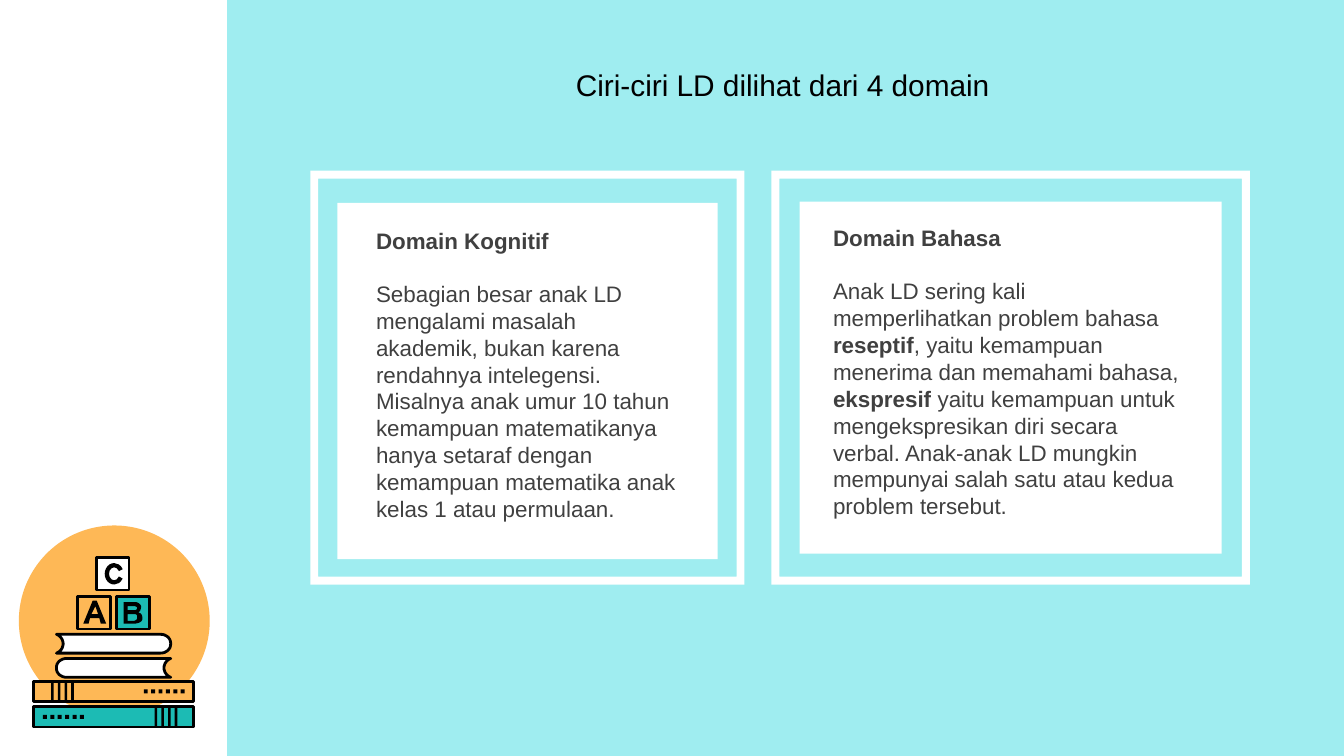
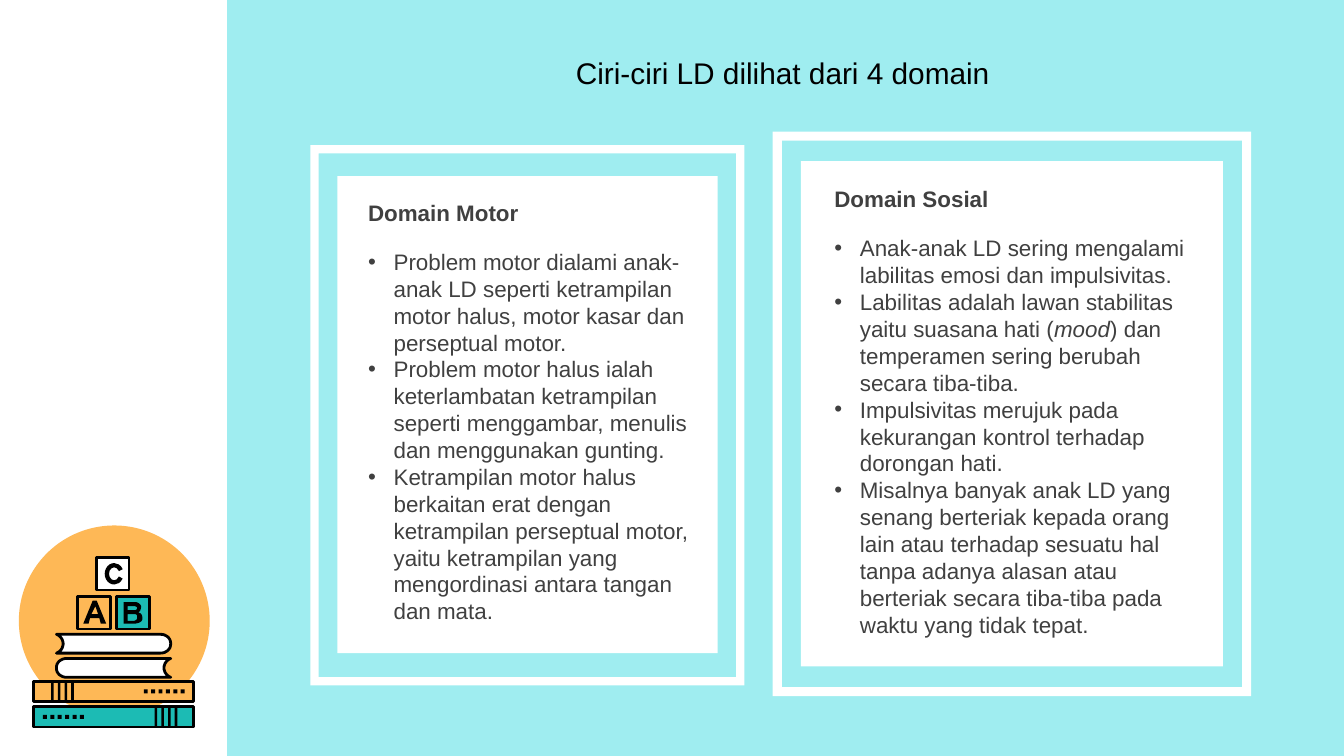
import pptx
import pptx.dml.color
import pptx.enum.shapes
import pptx.enum.text
import pptx.oxml.ns
import pptx.util
from lxml import etree

Inches = pptx.util.Inches
Pt = pptx.util.Pt
KIND = pptx.enum.shapes.MSO_SHAPE

COLORS = {"aqua": "9FEDF0", "gold": "FEB856", "teal": "1CBBB4",
          "white": "FFFFFF", "black": "000000", "gray": "404040"}
FONT = "Arial"
TITLE = "Ciri-ciri LD dilihat dari 4 domain"
INDENT = 0.19

# Outlines: a pair is a corner, a triple of pairs is a curve.
LETTER_A = [
    [(0.71, 4.51), (0.68, 4.57), (0.73, 4.57)],
    [(0.69, 4.47), (0.72, 4.47), (0.79, 4.64), (0.75, 4.64),
     (0.74, 4.6), (0.67, 4.6), (0.66, 4.64), (0.62, 4.64)],
]
LETTER_B = [
    [(0.95, 4.57), (0.95, 4.62), (1, 4.62),
     ((1.02, 4.61), (1.02, 4.61), (1.02, 4.59)),
     ((1.02, 4.58), (1.02, 4.57), (1, 4.57))],
    [(0.95, 4.51), (0.95, 4.54), (1, 4.54),
     ((1.01, 4.54), (1.02, 4.54), (1.02, 4.52)),
     ((1.02, 4.52), (1.01, 4.51), (1, 4.51))],
    [(0.92, 4.48), (1, 4.48),
     ((1.04, 4.48), (1.05, 4.51), (1.05, 4.51)),
     ((1.05, 4.54), (1.04, 4.55), (1.03, 4.56)),
     ((1.05, 4.56), (1.06, 4.58), (1.06, 4.6)),
     ((1.06, 4.63), (1.03, 4.64), (1, 4.64)), (0.92, 4.64)],
]
BOOK = [
    (0.42, 4.72), (1.19, 4.72),
    ((1.24, 4.72), (1.27, 4.75), (1.27, 4.79)),
    ((1.27, 4.83), (1.24, 4.86), (1.19, 4.86)), (0.42, 4.86),
    ((0.45, 4.85), (0.47, 4.82), (0.47, 4.79)),
    ((0.47, 4.76), (0.45, 4.73), (0.42, 4.72)),
]

SLIDES = [
    {"title": (1.85, 0.45, 7.95, 0.5), "gap": 14, "bullets": False, "panels": [
        {"frame": (2.31, 1.27, 3.23, 3.08), "card": (2.51, 1.51, 2.83, 2.65),
         "text": (2.7, 1.64, 2.44, 2.52), "head": "Domain Kognitif", "body": [
            "Sebagian besar anak LD mengalami masalah akademik, bukan karena "
            "rendahnya intelegensi. Misalnya anak umur 10 tahun kemampuan "
            "matematikanya hanya setaraf dengan kemampuan matematika anak "
            "kelas 1 atau permulaan."]},
        {"frame": (5.74, 1.27, 3.56, 3.08), "card": (5.95, 1.5, 3.14, 2.62),
         "text": (6.1, 1.62, 2.83, 2.32), "head": "Domain Bahasa",
         "stress": "bold", "body": [
            "Anak LD sering kali memperlihatkan problem bahasa |reseptif|, "
            "yaitu kemampuan menerima dan memahami bahasa, |ekspresif |yaitu "
            "kemampuan untuk mengekspresikan diri secara verbal. Anak-anak LD "
            "mungkin mempunyai salah satu atau kedua problem tersebut."]},
    ]},
    {"title": (1.85, 0.36, 7.95, 0.42), "gap": 12, "bullets": True, "panels": [
        {"frame": (2.31, 1.08, 3.23, 4.02), "card": (2.51, 1.31, 2.83, 3.55),
         "text": (2.64, 1.43, 2.59, 3.3), "head": "Domain Motor", "body": [
            "Problem motor dialami anak-anak LD seperti ketrampilan motor "
            "halus, motor kasar dan perseptual motor.",
            "Problem motor halus ialah keterlambatan ketrampilan seperti "
            "menggambar, menulis dan menggunakan gunting.",
            "Ketrampilan motor halus berkaitan erat dengan ketrampilan "
            "perseptual motor, yaitu ketrampilan yang mengordinasi antara "
            "tangan dan mata."]},
        {"frame": (5.75, 0.98, 3.56, 4.2), "card": (5.96, 1.2, 3.14, 3.76),
         "text": (6.11, 1.33, 2.83, 3.53), "head": "Domain Sosial",
         "stress": "italic", "body": [
            "Anak-anak LD sering mengalami labilitas emosi dan impulsivitas.",
            "Labilitas adalah lawan stabilitas yaitu suasana hati (|mood|) dan "
            "temperamen sering berubah secara tiba-tiba.",
            "Impulsivitas merujuk pada kekurangan kontrol terhadap dorongan "
            "hati.",
            "Misalnya banyak anak LD yang senang berteriak kepada orang lain "
            "atau terhadap sesuatu hal tanpa adanya alasan atau berteriak "
            "secara tiba-tiba pada waktu yang tidak tepat."]},
    ]},
]


def rgb(name):
    return pptx.dml.color.RGBColor.from_string(COLORS[name])


def paint(shape, fill, line):
    shape.shadow.inherit = False
    shape.fill.solid()
    shape.fill.fore_color.rgb = rgb(fill)
    if line:
        shape.line.color.rgb = rgb("black")
        shape.line.width = Pt(1.5)
    else:
        shape.line.fill.background()


def add_shape(slide, box, fill, kind=KIND.RECTANGLE, line=False, adjust=()):
    shape = slide.shapes.add_shape(kind, *map(Inches, box))
    for index, value in enumerate(adjust):
        shape.adjustments[index] = value
    paint(shape, fill, line)


def flatten(outline, steps=8):
    """Turn corners and cubic curves into a list of points."""
    points = []
    for part in outline:
        if not isinstance(part[0], tuple):
            points.append(part)
            continue
        knots = (points[-1], *part)
        for step in range(1, steps + 1):
            t = step / steps
            u = 1 - t
            weights = (u ** 3, 3 * u * u * t, 3 * u * t * t, t ** 3)
            points.append(tuple(sum(w * knot[axis] for w, knot in zip(weights, knots))
                                for axis in (0, 1)))
    return points


def add_outline(slide, contours, fill, line=False):
    paths = [[(x * 1000, y * 1000) for x, y in contour] for contour in contours]
    builder = slide.shapes.build_freeform(*paths[0][0], scale=Inches(1) / 1000)
    for index, points in enumerate(paths):
        if index:
            builder.move_to(*points[0])
        builder.add_line_segments(points[1:], close=True)
    paint(builder.convert_to_shape(), fill, line)


def add_spine(slide, top, fill, bands, dots):
    """Draw a lying book with four bands and six dots, from the given lefts."""
    add_shape(slide, (0.25, top, 1.19, 0.15), fill, line=True)
    for i in range(4):
        add_shape(slide, (bands + i * 0.05, top, 0.02, 0.15), "black")
    for i in range(6):
        add_shape(slide, (dots + i * 0.055, top + 0.06, 0.03, 0.03), "black")


def add_emblem(slide):
    add_shape(slide, (0.14, 3.91, 1.42, 1.42), "gold", KIND.OVAL)
    add_spine(slide, 5.07, "gold", 0.38, 1.07)
    add_spine(slide, 5.26, "teal", 1.15, 0.32)
    for left, top, fill in ((0.58, 4.44, "gold"), (0.87, 4.44, "teal"),
                            (0.72, 4.15, "white")):
        add_shape(slide, (left, top, 0.24, 0.24), fill, line=True)
    for letter in (LETTER_A, LETTER_B):
        add_outline(slide, [flatten(part) for part in letter], "black")
    add_shape(slide, (0.78, 4.19, 0.14, 0.16), "black", KIND.BLOCK_ARC,
              adjust=(17.567, 198.895, 0.228))
    book = flatten(BOOK)
    add_outline(slide, [book], "white", line=True)
    add_outline(slide, [[(1.69 - x, y + 0.18) for x, y in book]], "white", line=True)


def add_frame(slide, box):
    frame = slide.shapes.add_textbox(*map(Inches, box)).text_frame
    frame.word_wrap = True
    return frame


def style(paragraph, size, color, bold=False):
    for run in paragraph.runs:
        run.font.name = FONT
        run.font.size = Pt(size)
        run.font.color.rgb = rgb(color)
        run.font.bold = bold


def add_title(slide, box):
    paragraph = add_frame(slide, box).paragraphs[0]
    paragraph.text = TITLE
    paragraph.alignment = pptx.enum.text.PP_ALIGN.CENTER
    style(paragraph, 16, "black")


def set_bullet(paragraph):
    props = paragraph._p.get_or_add_pPr()
    props.set("marL", str(Inches(INDENT)))
    props.set("indent", str(-Inches(INDENT)))
    for tag, key, value in (("a:buFont", "typeface", FONT), ("a:buChar", "char", "•")):
        etree.SubElement(props, pptx.oxml.ns.qn(tag)).set(key, value)


def add_body(frame, text, bullet, stress):
    """Add a paragraph; the parts between bars get the stress."""
    paragraph = frame.add_paragraph()
    if bullet:
        set_bullet(paragraph)
    for part in text.split("|"):
        paragraph.add_run().text = part
    style(paragraph, 12, "gray")
    for run in paragraph.runs[1::2]:
        setattr(run.font, stress, True)
    return paragraph


def add_panel(slide, panel, gap, bullets):
    frame = add_frame(slide, panel["text"])
    frame.text = panel["head"]
    style(frame.paragraphs[0], 12, "gray", bold=True)
    for text in panel["body"]:
        add_body(frame, text, bullets, panel.get("stress"))
    frame.paragraphs[1].space_before = Pt(gap)


def main():
    deck = pptx.Presentation()
    deck.slide_width = Inches(10)
    deck.slide_height = Inches(5.625)
    for page in SLIDES:
        slide = deck.slides.add_slide(deck.slide_layouts[6])
        add_shape(slide, (1.69, 0, 8.31, 5.625), "aqua")
        add_emblem(slide)
        add_title(slide, page["title"])
        for panel in page["panels"]:
            add_shape(slide, panel["frame"], "white", KIND.FRAME, adjust=(0.019,))
            add_shape(slide, panel["card"], "white")
        for panel in page["panels"]:
            add_panel(slide, panel, page["gap"], page["bullets"])
    deck.save("out.pptx")


if __name__ == "__main__":
    main()
